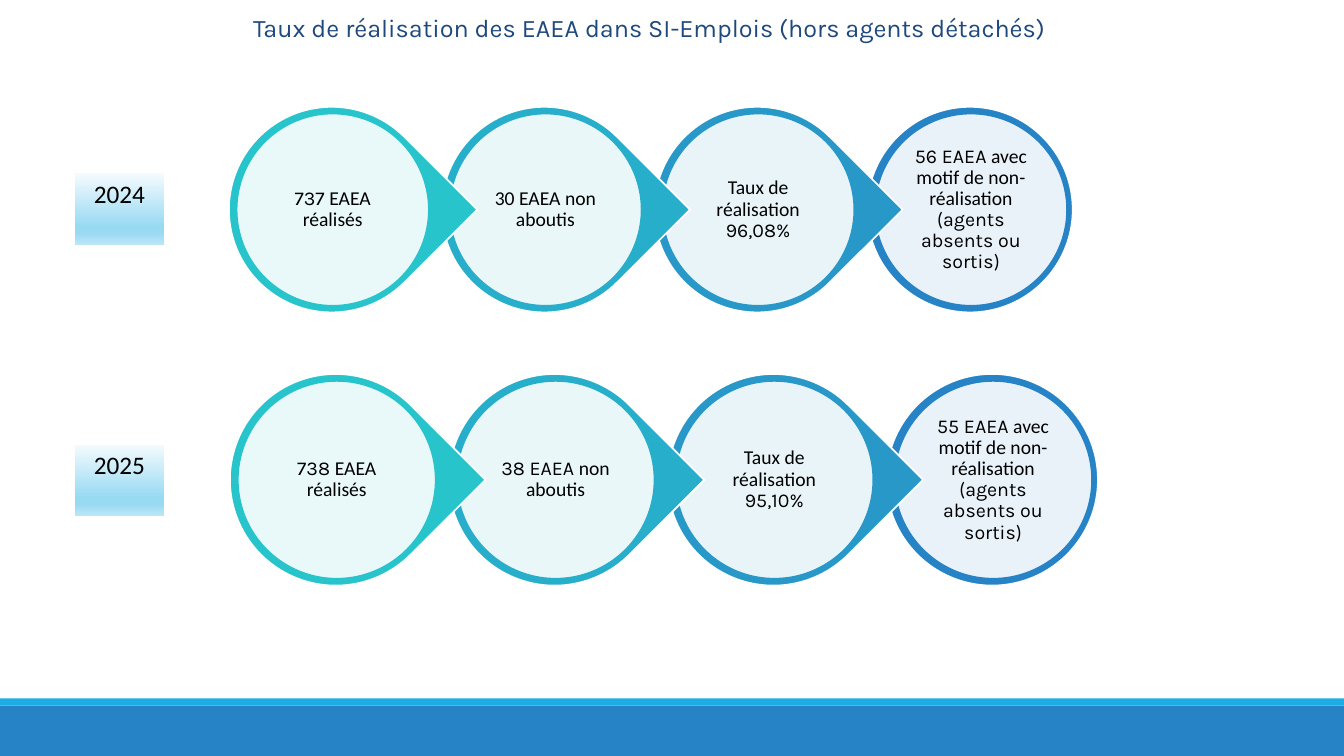
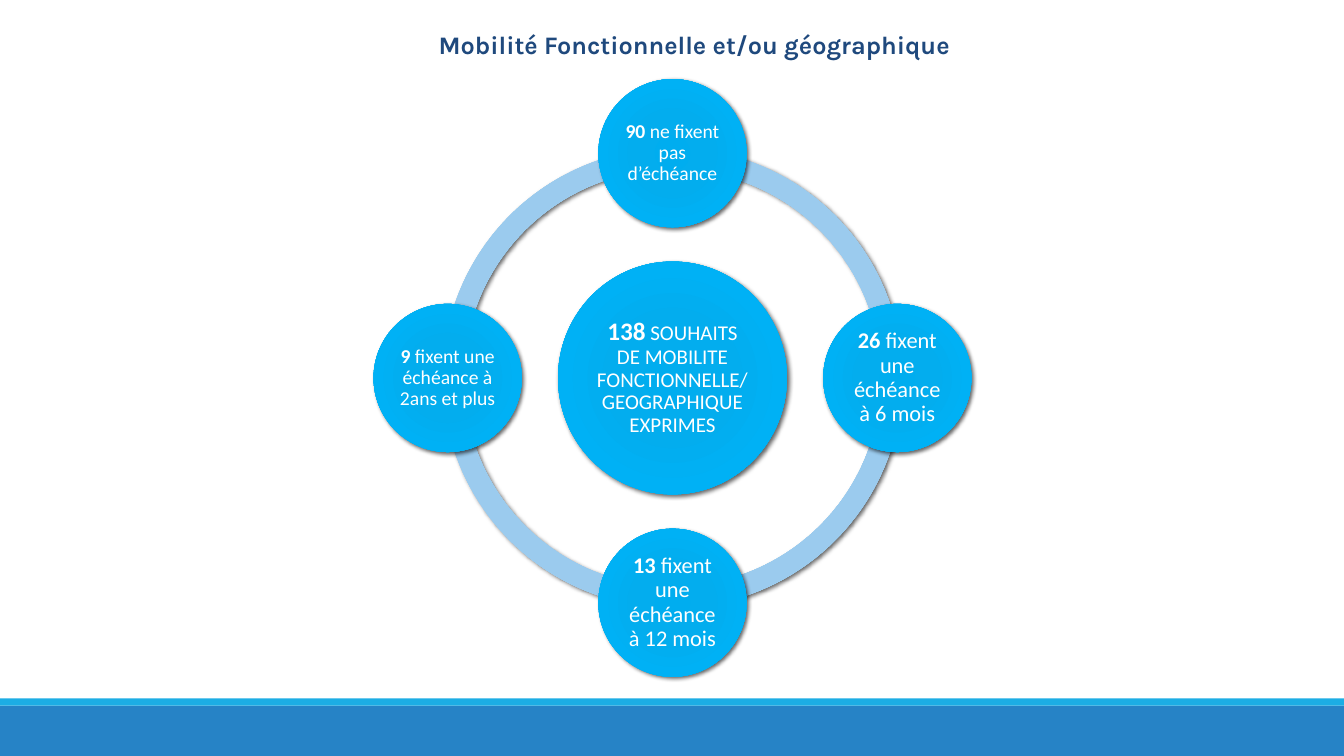
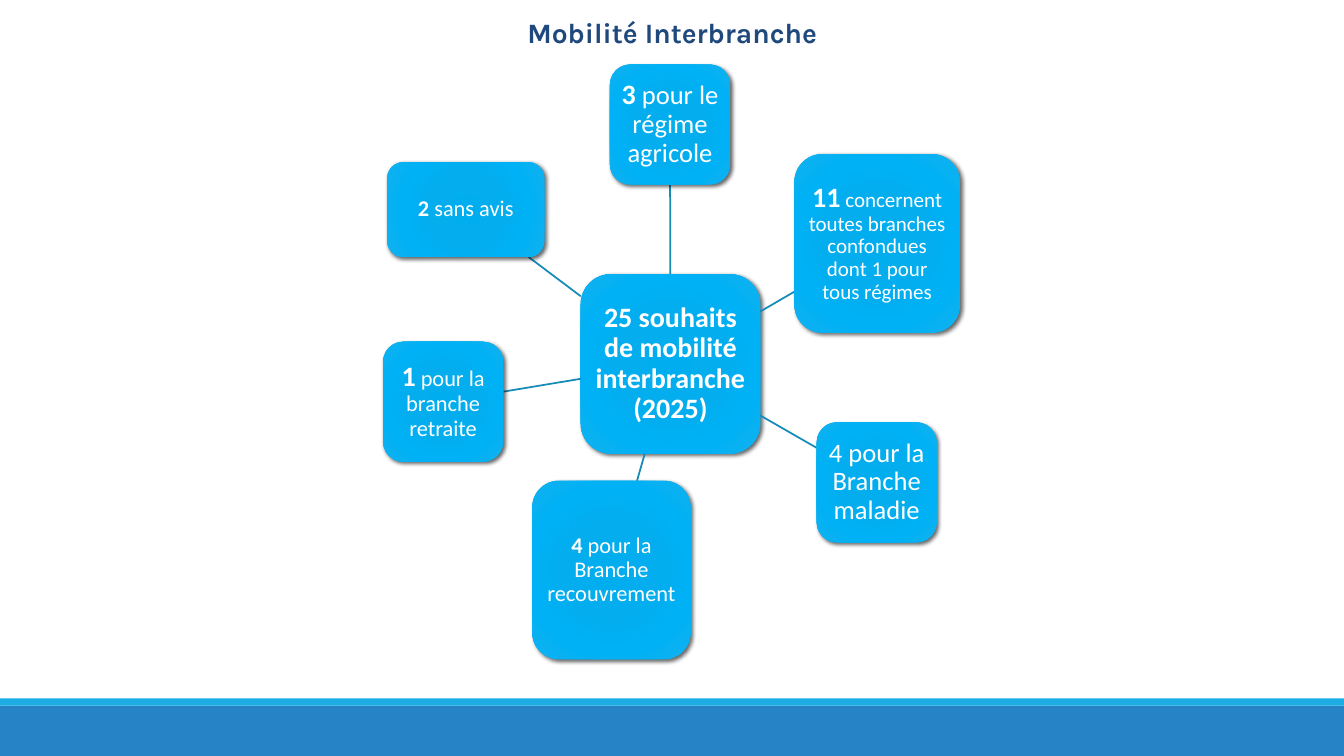
import math
from dataclasses import dataclass
from typing import NamedTuple

from lxml import etree
from pptx import Presentation
from pptx import util as u
from pptx.dml.color import RGBColor
from pptx.enum import shapes, text
from pptx.oxml import parse_xml
from pptx.oxml.ns import nsdecls, qn

# The slide is a grid of one-inch columns and rows.
CELL = u.Inches(1)
COLS, ROWS = 13.33, 7.5
TITLE_ONLY = 5

WHITE, BLACK, NAVY = "FFFFFF", "000000", "1F497D"
BAND, BAND_EDGE, SPOKE = "2683C6", "1CADE4", "168BB7"
STEP_COLORS = ("28C4CC", "27AECA", "2798C8", "2683C6")

BODY_FONT, TITLE_FONT = "Calibri", "Karla"
LINE_WIDTH = u.Pt(1.25)

RADIAL = ('<a:path path="circle"><a:fillToRect l="100000" t="100000" '
          'r="100000" b="100000"/></a:path>')
DOWNWARD = '<a:lin ang="5400000" scaled="0"/>'
OVAL = shapes.MSO_SHAPE.OVAL
RECT = shapes.MSO_SHAPE.RECTANGLE
ROUNDED = shapes.MSO_SHAPE.ROUNDED_RECTANGLE


class Gradient(NamedTuple):
    stops: tuple
    direction: str


NODE_FILL = Gradient(((0, "00ADEF"), (34, "03ADEE"), (70, "00B1F5"), (100, "12B1EE")), RADIAL)
RING_FILL = Gradient(((0, "97C6E8"), (34, "9AC8E9"), (70, "9BCBEE"), (100, "A9D3F3")), RADIAL)
YEAR_FILL = Gradient(((0, "F4FBFE"), (74, "99DAF3"), (83, "99DAF3"), (100, "BBE6F7")), DOWNWARD)


class Run(NamedTuple):
    text: str
    size: float = 14
    bold: bool = False
    font: str = BODY_FONT


@dataclass(frozen=True)
class Box:
    """A rectangle in grid columns and rows."""
    left: float
    top: float
    width: float
    height: float

    @classmethod
    def around(cls, x: float, y: float, width: float, height: float) -> "Box":
        return cls(x - width / 2, y - height / 2, width, height)

    @property
    def center(self) -> tuple:
        return self.left + self.width / 2, self.top + self.height / 2

    def emu(self) -> tuple:
        return tuple(round(n * CELL) for n in (self.left, self.top, self.width, self.height))

    def edge_toward(self, x: float, y: float) -> tuple:
        """Point where the line from the centre to (x, y) leaves the box."""
        cx, cy = self.center
        dx, dy = x - cx, y - cy
        share = min(half / abs(d) for half, d in
                    ((self.width / 2, dx), (self.height / 2, dy)) if d)
        return cx + share * dx, cy + share * dy


@dataclass(frozen=True)
class Chain:
    """One year's row of overlapping circles."""
    year: str
    left: float
    top: float
    diameter: float
    pitch: float
    year_top: float
    steps: tuple


@dataclass(frozen=True)
class Node:
    box: Box
    runs: tuple


def rgb(color: str) -> RGBColor:
    return RGBColor.from_string(color)


def paint_gradient(sp, gradient: Gradient) -> None:
    stops = "".join(f'<a:gs pos="{pos * 1000}"><a:srgbClr val="{color}"/></a:gs>'
                    for pos, color in gradient.stops)
    sp.fill.background()
    props = sp.element.spPr
    props.replace(props.find(qn("a:noFill")), parse_xml(
        f'<a:gradFill {nsdecls("a")} rotWithShape="1"><a:gsLst>{stops}</a:gsLst>'
        f'{gradient.direction}</a:gradFill>'))


def add_shape(slide, kind, box: Box, fill, line: str = ""):
    sp = slide.shapes.add_shape(kind, *box.emu())
    sp.shadow.inherit = False
    if isinstance(fill, Gradient):
        paint_gradient(sp, fill)
    else:
        sp.fill.solid()
        sp.fill.fore_color.rgb = rgb(fill)
    if line:
        sp.line.color.rgb = rgb(line)
        sp.line.width = LINE_WIDTH
    else:
        sp.line.fill.background()
    return sp


def drop_shadow(sp) -> None:
    sp.element.spPr.find(qn("a:effectLst")).append(parse_xml(
        f'<a:outerShdw {nsdecls("a")} blurRad="{u.Pt(3)}" dist="{u.Pt(2)}" dir="2700000" '
        'algn="tl" rotWithShape="0"><a:srgbClr val="000000"><a:alpha val="60000"/>'
        '</a:srgbClr></a:outerShdw>'))


def make_translucent(sp, percent: int) -> None:
    color = sp.element.spPr.find(f"{qn('a:solidFill')}/{qn('a:srgbClr')}")
    etree.SubElement(color, qn("a:alpha")).set("val", str(percent * 1000))


def write(sp, runs: tuple, color: str, inset: float) -> None:
    """Centre one paragraph of formatted runs in a shape."""
    tf = sp.text_frame
    tf.word_wrap = True
    tf.vertical_anchor = text.MSO_ANCHOR.MIDDLE
    tf.margin_left = tf.margin_right = tf.margin_top = tf.margin_bottom = u.Inches(inset)
    p = tf.paragraphs[0]
    p.alignment = text.PP_ALIGN.CENTER
    p.line_spacing = 0.9
    for run in runs:
        r = p.add_run()
        r.text = run.text
        r.font.name, r.font.size, r.font.bold = run.font, u.Pt(run.size), run.bold
        r.font.color.rgb = rgb(color)


def add_bands(slide) -> None:
    """Put the footer bands on the layout that all slides share."""
    tree = slide.slide_layout.shapes.element
    for top, height, color in ((7, 0.5, BAND), (6.93, 0.07, BAND_EDGE)):
        sp = add_shape(slide, RECT, Box(0, top, COLS, height), color)
        tree.append(sp.element)


def add_slide(prs, title: str, box: Box, size: float = 18, bold: bool = True):
    slide = prs.slides.add_slide(prs.slide_layouts[TITLE_ONLY])
    sp = slide.shapes.title
    sp.left, sp.top, sp.width, sp.height = box.emu()
    tf = sp.text_frame
    tf.text = title
    tf.word_wrap = True
    tf.auto_size = text.MSO_AUTO_SIZE.NONE
    tf.vertical_anchor = text.MSO_ANCHOR.TOP
    p = tf.paragraphs[0]
    p.alignment = text.PP_ALIGN.LEFT
    font = p.runs[0].font
    font.name, font.size, font.bold = TITLE_FONT, u.Pt(size), bold
    font.color.rgb = rgb(NAVY)
    return slide


def add_year(slide, chain: Chain) -> None:
    sp = add_shape(slide, RECT, Box(0.74, chain.year_top, 0.89, 0.71), YEAR_FILL)
    write(sp, (Run(chain.year, 18),), BLACK, 0.05)
    sp.text_frame.vertical_anchor = text.MSO_ANCHOR.TOP
    sp.text_frame.paragraphs[0].line_spacing = 1.0


def add_chain(slide, chain: Chain) -> None:
    d = chain.diameter
    last = len(chain.steps) - 1
    for i in range(last, -1, -1):
        outer = Box(chain.left + i * chain.pitch, chain.top, d, d)
        color = STEP_COLORS[i]
        kind = OVAL if i == last else shapes.MSO_SHAPE.TEAR
        sp = add_shape(slide, kind, outer, color, WHITE)
        sp.rotation = 0 if i == last else 45
        x, y = outer.center
        disc = add_shape(slide, OVAL, Box.around(x + 0.01, y, 0.935 * d, 0.935 * d), WHITE, color)
        make_translucent(disc, 90)
        write(disc, chain.steps[i], BLACK, 0.02)
    add_year(slide, chain)


def add_node(slide, kind, node: Node, inset: float) -> None:
    sp = add_shape(slide, kind, node.box, NODE_FILL)
    drop_shadow(sp)
    write(sp, node.runs, WHITE, inset)


def add_ring(slide, box: Box) -> None:
    quarter = 54  # 90 degrees in block-arc adjustment units
    for i in (2, 1, 0, 3):
        sp = add_shape(slide, shapes.MSO_SHAPE.BLOCK_ARC, box, RING_FILL)
        for j, value in enumerate((i * quarter, (i + 1) % 4 * quarter, 0.046)):
            sp.adjustments[j] = value
        drop_shadow(sp)


def add_spoke(slide, hub: Box, box: Box) -> None:
    ends = hub.edge_toward(*box.center) + box.edge_toward(*hub.center)
    line = slide.shapes.add_connector(shapes.MSO_CONNECTOR.STRAIGHT,
                                      *(round(n * CELL) for n in ends))
    line.line.color.rgb = rgb(SPOKE)
    line.line.width = LINE_WIDTH
    etree.SubElement(line.element.spPr, qn("a:effectLst"))


def done(count: str) -> tuple:
    return Run(f"{count} ", font=TITLE_FONT), Run("EAEA réalisés")


def rate(value: str) -> tuple:
    return Run("Taux de réalisation "), Run(value, font=TITLE_FONT)


def excused(count: str) -> tuple:
    return (Run(f"{count} EAEA", font=TITLE_FONT), Run(" avec motif de non-réalisation ("),
            Run("agents absents ou sortis", font=TITLE_FONT), Run(")"))


def counted(count: str, label: str, size: float, count_size: float = 0) -> tuple:
    """A bold count followed by its label."""
    return Run(count, count_size or size, True), Run(f" {label}", size)


CHAINS = (
    Chain("2024", 2.27, 1.06, 2.04, 2.11, 1.72,
          (done("737"), (Run("30 EAEA non aboutis"),), rate("96,08%"), excused("56"))),
    Chain("2025", 2.28, 3.71, 2.1, 2.17, 4.41,
          (done("738"), (Run("38 EAEA", font=TITLE_FONT), Run(" non aboutis")),
           rate("95,10%"), excused("55"))),
)

ORBIT_CENTER, ORBIT_RADIUS, MOON = (6.67, 3.75), 2.23, 1.47
ORBIT_HUB = Node(Box.around(*ORBIT_CENTER, 2.27, 2.31), counted(
    "138", "SOUHAITS DE MOBILITE FONCTIONNELLE/GEOGRAPHIQUE EXPRIMES", 15, 18))
# Clockwise from the top.
MOONS = (
    counted("90", "ne fixent pas d’échéance", 14),
    counted("26", "fixent une échéance à 6 mois", 16),
    counted("13", "fixent une échéance à 12 mois", 16),
    counted("9", "fixent une échéance à 2ans et plus", 14),
)

BRANCH_HUB = Node(Box(5.76, 2.72, 1.78, 1.78),
                  (Run("25 souhaits de mobilité interbranche (2025)", 20, True),))
BRANCHES = (
    Node(Box(6.05, 0.64, 1.19, 1.19), counted("3", "pour le régime agricole", 19, 20)),
    Node(Box(7.88, 1.53, 1.64, 1.77), counted(
        "11", "concernent toutes branches confondues dont 1 pour tous régimes", 15, 20)),
    Node(Box(8.1, 4.19, 1.19, 1.19), (Run("4 pour la Branche maladie", 19),)),
    Node(Box(5.28, 4.77, 1.57, 1.77), counted("4", "pour la Branche recouvrement", 16)),
    Node(Box(3.8, 3.39, 1.19, 1.19), counted("1", "pour la branche retraite", 16, 20)),
    Node(Box(3.84, 1.61, 1.56, 0.94), counted("2", "sans avis", 16)),
)


def build_completion(prs) -> None:
    slide = add_slide(prs, "Taux de réalisation des EAEA dans SI-Emplois (hors agents détachés)",
                      Box(2.41, 0.07, 8.73, 0.4), bold=False)
    add_bands(slide)
    for chain in CHAINS:
        add_chain(slide, chain)


def build_deadlines(prs) -> None:
    slide = add_slide(prs, "Mobilité Fonctionnelle et/ou géographique",
                      Box(4.25, 0.24, 5.86, 0.4))
    add_ring(slide, Box.around(*ORBIT_CENTER, 4.56, 4.56))
    add_node(slide, OVAL, ORBIT_HUB, 0.02)
    x, y = ORBIT_CENTER
    for i, runs in enumerate(MOONS):
        angle = math.tau * i / len(MOONS)
        box = Box.around(x + ORBIT_RADIUS * math.sin(angle),
                         y - ORBIT_RADIUS * math.cos(angle), MOON, MOON)
        add_node(slide, OVAL, Node(box, runs), 0.02)


def build_branches(prs) -> None:
    slide = add_slide(prs, "Mobilité Interbranche", Box(5.13, 0.1, 3.44, 0.44), 20)
    add_node(slide, ROUNDED, BRANCH_HUB, 0.05)
    for node in BRANCHES:
        add_spoke(slide, BRANCH_HUB.box, node.box)
        add_node(slide, ROUNDED, node, 0.05)


def main() -> None:
    prs = Presentation()
    prs.slide_width, prs.slide_height = u.Inches(COLS), u.Inches(ROWS)
    build_completion(prs)
    build_deadlines(prs)
    build_branches(prs)
    prs.save("out.pptx")


if __name__ == "__main__":
    main()
